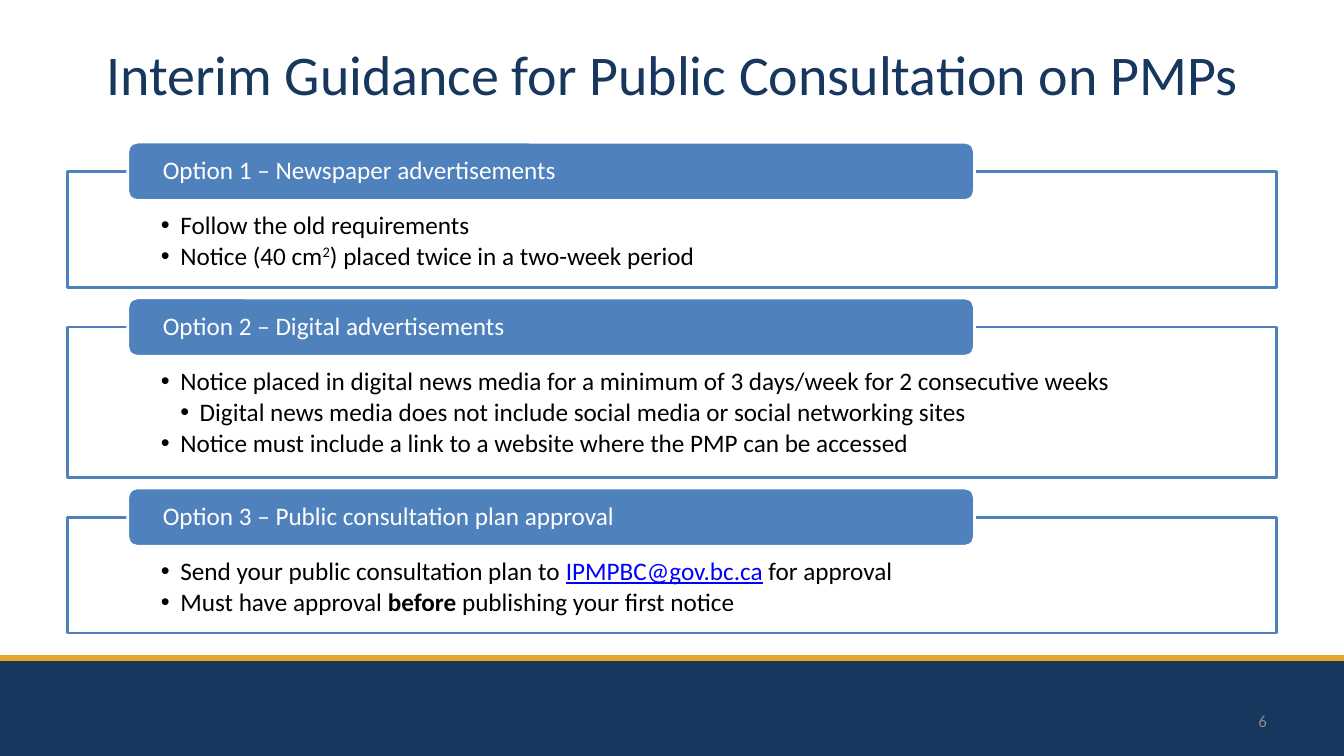
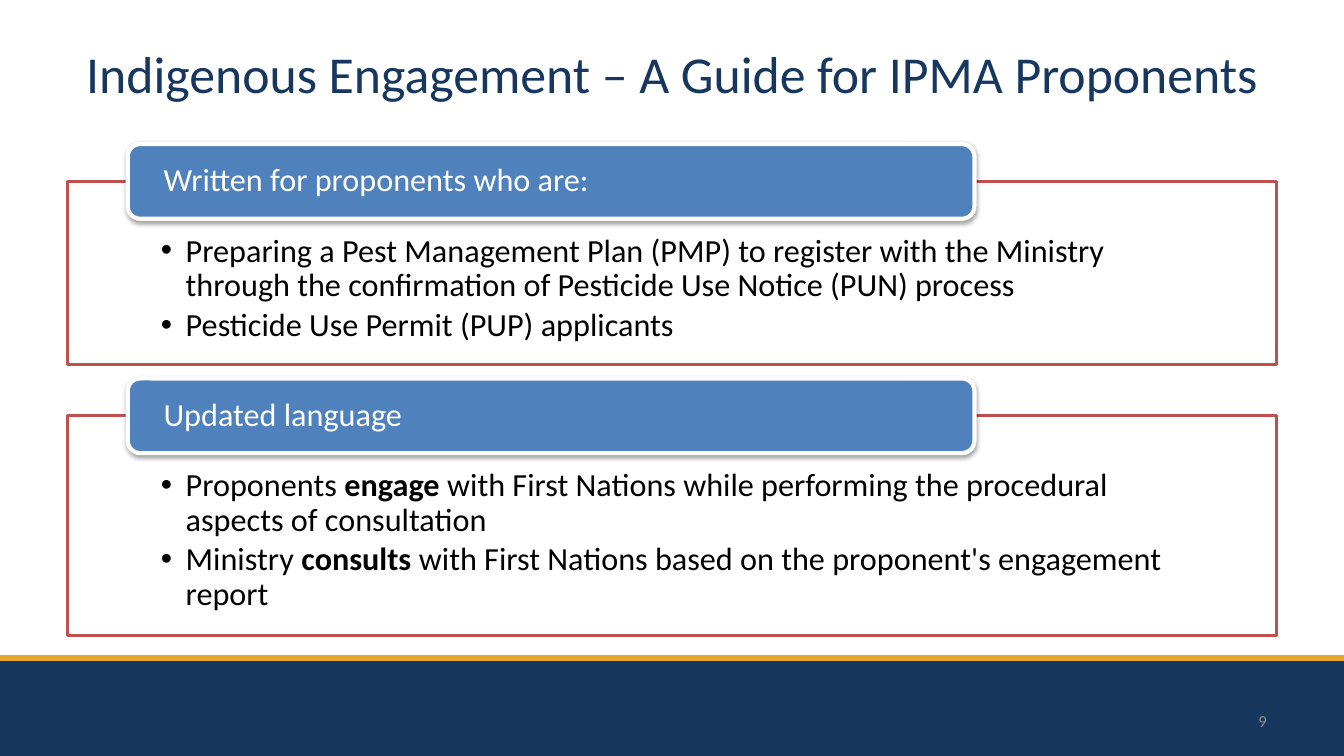
import pptx
import pptx.dml.color
import pptx.enum.shapes
import pptx.enum.text
import pptx.oxml
import pptx.oxml.ns
import pptx.util
import lxml.etree

WIDE, HIGH = 13.33, 7.5
EDGE = WIDE / 20
BODY = WIDE - 2 * EDGE
BAND = 6.53
FONT = "Calibri"
NAVY, GOLD, BLUE, RED = "17375E", "E3A82B", "4F81BD", "C0504D"
WHITE, BLACK, GRAY, LINK = "FFFFFF", "000000", "8C8C8C", "0000FF"
ANCHOR = pptx.enum.text.MSO_ANCHOR
ALIGN = pptx.enum.text.PP_ALIGN
SHAPE = pptx.enum.shapes.MSO_SHAPE

PLANS = [
    ("Option 1 – Newspaper advertisements", 1.15, [
        (1, ["Follow the old requirements"]),
        (1, ["Notice (40 cm", ("2", "sup"), ") placed twice in a two-week period"]),
    ]),
    ("Option 2 – Digital advertisements", 1.49, [
        (1, ["Notice placed in digital news media for a minimum of 3 days/week for 2 consecutive weeks"]),
        (2, ["Digital news media does not include social media or social networking sites"]),
        (1, ["Notice must include a link to a website where the PMP can be accessed"]),
    ]),
    ("Option 3 – Public consultation plan approval", 1.15, [
        (1, ["Send your public consultation plan to ", ("IPMPBC@gov.bc.ca", "link"), " for approval"]),
        (1, ["Must have approval ", ("before ", "bold"), "publishing your first notice"]),
    ]),
]
GUIDE = [
    ("Written for proponents who are:", 1.82, [
        (1, ["Preparing a Pest Management Plan (PMP) to register with the Ministry "
             "through the confirmation of Pesticide Use Notice (PUN) process"]),
        (1, ["Pesticide Use Permit (PUP) applicants"]),
    ]),
    ("Updated language", 2.18, [
        (1, ["Proponents ", ("engage", "bold"),
             " with First Nations while performing the procedural aspects of consultation"]),
        (1, ["Ministry ", ("consults ", "bold"),
             "with First Nations based on the proponent's engagement report"]),
    ]),
]


def color(code):
    """Turn a hex string into a colour."""
    return pptx.dml.color.RGBColor.from_string(code)


def inch(*sizes):
    """Turn numbers into a list of lengths in inches."""
    return [pptx.util.Inches(size) for size in sizes]


def style(para, size, ink, align=ALIGN.LEFT):
    """Set the font and alignment of a paragraph."""
    para.alignment = align
    para.font.name = FONT
    para.font.size = pptx.util.Pt(size)
    para.font.color.rgb = color(ink)


def block(slide, kind, box, fill, line=None, width=2):
    """Draw a filled shape without a shadow."""
    shape = slide.shapes.add_shape(kind, *inch(*box))
    shape.shadow.inherit = False
    shape.fill.solid()
    shape.fill.fore_color.rgb = color(fill)
    if line:
        shape.line.color.rgb = color(line)
        shape.line.width = pptx.util.Pt(width)
    else:
        shape.line.fill.background()
    return shape


def frame(shape, anchor, pads):
    """Set up wrapping, anchor and insets (left, top, right, bottom) of a text."""
    text = shape.text_frame
    text.word_wrap = True
    text.auto_size = pptx.enum.text.MSO_AUTO_SIZE.NONE
    text.vertical_anchor = anchor
    text.margin_left, text.margin_top, text.margin_right, text.margin_bottom = inch(*pads)
    return text


def shade(shape):
    """Give a shape a soft shadow below it."""
    ns = pptx.oxml.ns.qn
    effect = shape._element.spPr.find(ns("a:effectLst"))
    outer = lxml.etree.SubElement(effect, ns("a:outerShdw"), blurRad="40000",
                                  dist="20000", dir="5400000", rotWithShape="0")
    ink = lxml.etree.SubElement(outer, ns("a:srgbClr"), val=BLACK)
    lxml.etree.SubElement(ink, ns("a:alpha"), val="38000")


def write(para, parts):
    """Add plain and marked runs to a paragraph."""
    for part in parts:
        words, mark = (part, None) if isinstance(part, str) else part
        run = para.add_run()
        run.text = words
        if mark == "bold":
            run.font.bold = True
        elif mark == "link":
            run.font.underline = True
            run.font.color.rgb = color(LINK)
        elif mark == "sup":
            run._r.get_or_add_rPr().set("baseline", "30000")


def bullet(para, level, size):
    """Give a paragraph a hanging bullet."""
    ns = pptx.oxml.ns.qn
    step = pptx.util.Pt(0.77 * size)
    props = para._p.get_or_add_pPr()
    props.set("marL", str(level * step))
    props.set("indent", str(-step))
    lxml.etree.SubElement(props, ns("a:buFont"), typeface="Arial")
    lxml.etree.SubElement(props, ns("a:buChar"), char="•")


def panel(slide, top, high, head, items, size, line, rim, soft):
    """Draw an outlined list with its heading tab and return its bottom."""
    em = size / 72
    tab = 2.32 * em
    body = block(slide, SHAPE.RECTANGLE, (EDGE, top + tab / 2, BODY, high), WHITE, line)
    text = frame(body, ANCHOR.TOP, (0.93, 1.64 * em, 0.93, 0.56 * em))
    for spot, (level, parts) in enumerate(items):
        para = text.add_paragraph() if spot else text.paragraphs[0]
        bullet(para, level, size)
        para.line_spacing = 0.9
        para.space_after = pptx.util.Pt(0.15 * size)
        style(para, size, BLACK)
        write(para, parts)
    label = block(slide, SHAPE.ROUNDED_RECTANGLE,
                  (EDGE + BODY / 20, top, 0.7 * BODY, tab), BLUE, WHITE, rim)
    if soft:
        shade(label)
    para = frame(label, ANCHOR.MIDDLE, (0.32, 0, 0.32, 0)).paragraphs[0]
    para.text = head
    para.line_spacing = 0.9
    style(para, size, WHITE)
    return top + tab / 2 + high


def stack(slide, top, panels, size, line, rim, soft=False):
    """Place panels under each other with equal gaps."""
    for head, high, items in panels:
        base = panel(slide, top, high, head, items, size, line, rim, soft)
        top = base + 0.42 * size / 72


def base(deck, title, size, page):
    """Add a slide with its title, footer band and page number."""
    slide = deck.slides.add_slide(deck.slide_layouts[5])
    block(slide, SHAPE.RECTANGLE, (0, BAND, WIDE, HIGH - BAND), NAVY)
    rule = slide.shapes.add_connector(pptx.enum.shapes.MSO_CONNECTOR.STRAIGHT,
                                      *inch(0, BAND, WIDE, BAND))
    rule.line.color.rgb = color(GOLD)
    rule.line.width = pptx.util.Pt(4.5)
    lxml.etree.SubElement(rule._element.spPr, pptx.oxml.ns.qn("a:effectLst"))
    wide = 3.11
    num = slide.shapes.add_textbox(*inch(WIDE - EDGE - wide, 6.95, wide, 0.4))
    para = frame(num, ANCHOR.MIDDLE, (0.1, 0.05, 0.1, 0.05)).paragraphs[0]
    para.text = page
    style(para, 12, GRAY, ALIGN.RIGHT)
    name = slide.shapes.title
    name.left, name.top, name.width, name.height = inch(EDGE, 0.3, BODY, 0.85)
    para = frame(name, ANCHOR.MIDDLE, (0.1, 0.05, 0.1, 0.05)).paragraphs[0]
    para.text = title
    style(para, size, NAVY, ALIGN.CENTER)
    return slide


def main():
    """Build and save the deck."""
    deck = pptx.Presentation()
    deck.slide_width, deck.slide_height = inch(WIDE, HIGH)
    slide = base(deck, "Interim Guidance for Public Consultation on PMPs", 40, "6")
    stack(slide, 1.41, PLANS, 18, BLUE, 2)
    slide = base(deck, "Indigenous Engagement – A Guide for IPMA Proponents", 37, "9")
    stack(slide, 1.43, GUIDE, 23, RED, 3, soft=True)
    deck.save("out.pptx")


if __name__ == "__main__":
    main()
